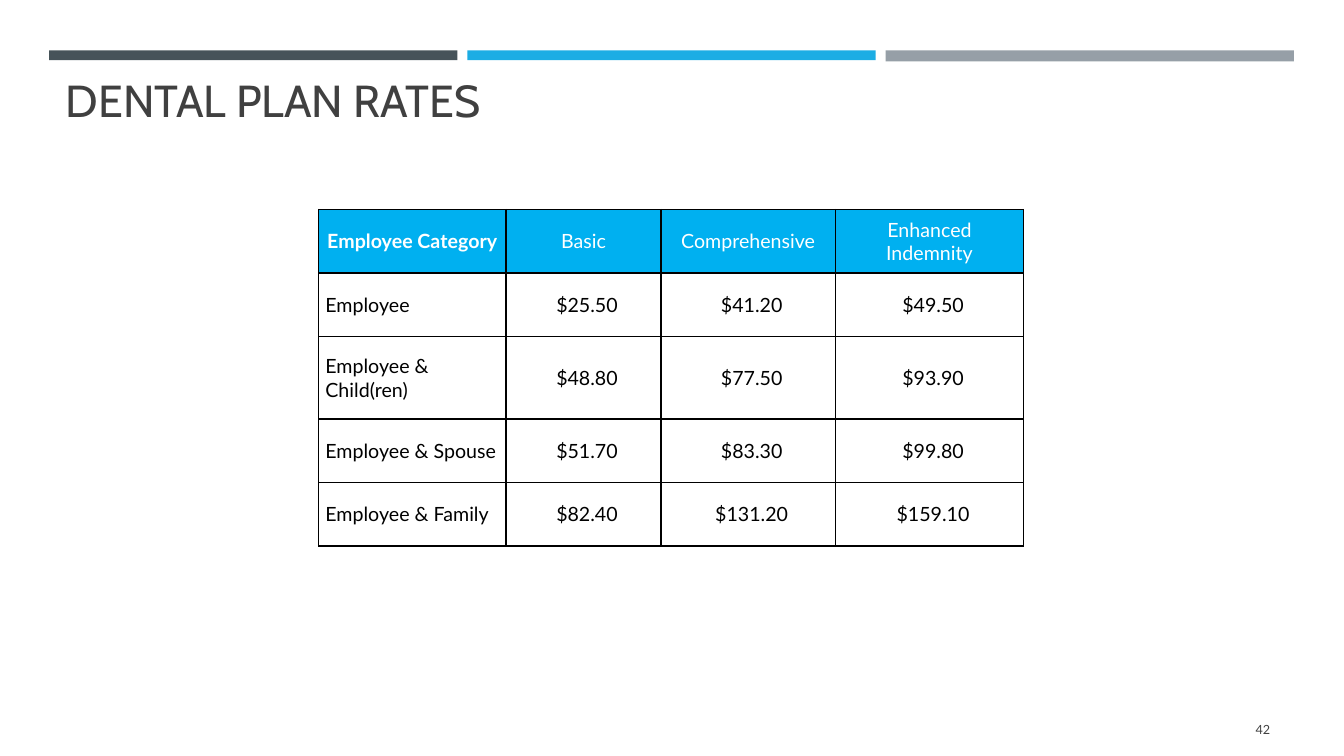
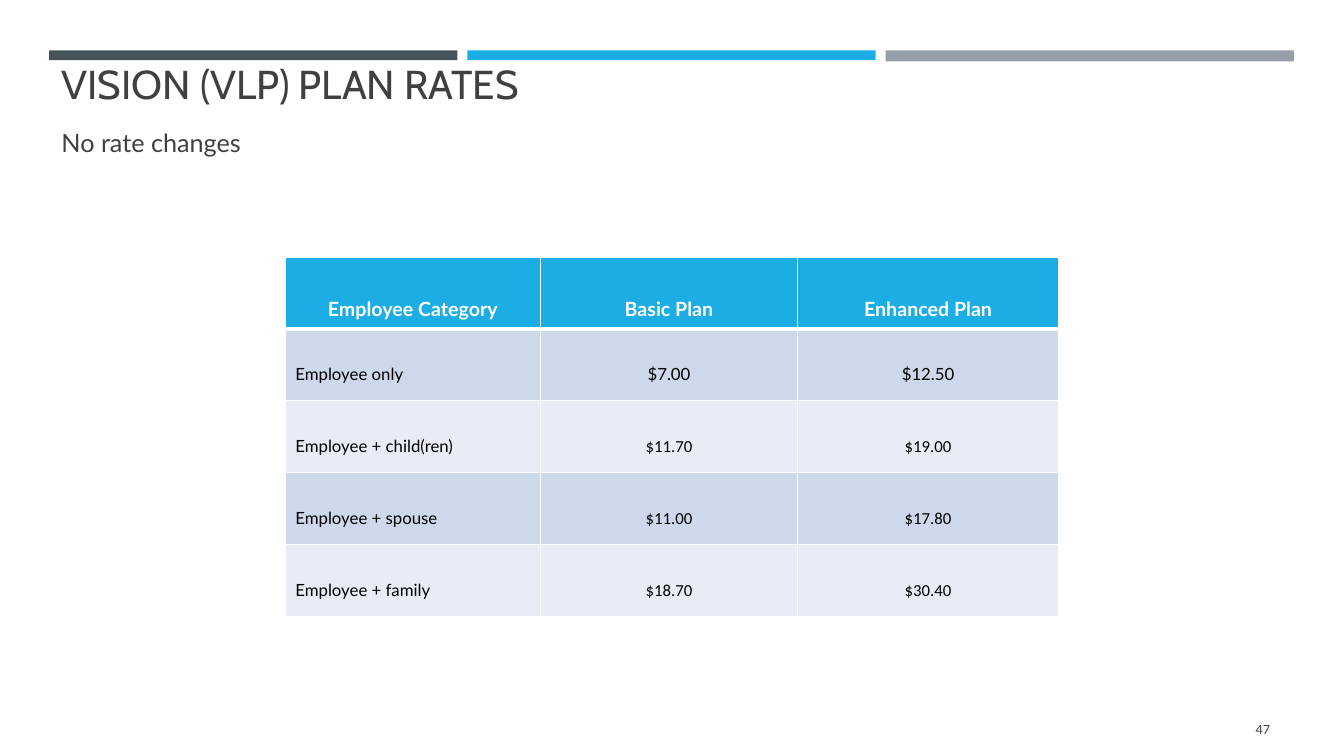
from dataclasses import dataclass

from pptx import Presentation
from pptx.dml.color import RGBColor
from pptx.enum.shapes import MSO_SHAPE
from pptx.enum.text import MSO_ANCHOR, MSO_AUTO_SIZE, PP_ALIGN
from pptx.oxml import parse_xml
from pptx.oxml.ns import nsdecls
from pptx.util import Cm, Pt


@dataclass(frozen=True)
class Theme:
    heading_font: str = "Cabin"
    body_font: str = "Lato"
    price_font: str = "Calibri"
    text: str = "404040"
    black: str = "000000"
    white: str = "FFFFFF"
    bands: tuple = ("465359", "1CADE4", "969FA7")
    dental_header: str = "00B0F0"
    vision_header: str = "1CADE4"
    stripes: tuple = ("CDD9EA", "E8EDF5")
    subtitle_size: float = 18
    table_size: float = 14
    small_table_size: float = 12
    number_size: float = 9


THEME = Theme()

BAND_LEFT, BAND_TOP, BAND_WIDTH, BAND_STEP = 1.24, 1.27, 10.29, 10.54
BAND_HEIGHTS = (0.25, 0.25, 0.28)
NUMBER_BOX = (29.34, 17.86, 2.92, 1.02)

DENTAL = {
    "title": "DENTAL PLAN RATES",
    "title_box": (1.4, 1.88, 20.88, 1.27),
    "title_size": 32,
    "title_anchor": MSO_ANCHOR.MIDDLE,
    "number": "42",
    "table_at": (8.03, 5.28),
    "columns": (4.72, 3.91, 4.39, 4.75),
    "row_heights": (1.6, 1.6, 2.08, 1.6, 1.6),
    "rates": [
        ("Employee Category", "Basic", "Comprehensive", "Enhanced Indemnity"),
        ("Employee", "$25.50", "$41.20", "$49.50"),
        ("Employee & Child(ren)", "$48.80", "$77.50", "$93.90"),
        ("Employee & Spouse", "$51.70", "$83.30", "$99.80"),
        ("Employee & Family", "$82.40", "$131.20", "$159.10"),
    ],
}

VISION = {
    "title": "VISION (VLP) PLAN RATES",
    "title_box": (1.3, 1.47, 21.46, 1.37),
    "title_size": 28.8,
    "title_anchor": MSO_ANCHOR.BOTTOM,
    "subtitle": "No rate changes",
    "subtitle_box": (1.3, 2.87, 26.67, 1.37),
    "number": "47",
    "table_at": (7.19, 6.48),
    "columns": (6.43, 6.48, 6.58),
    "row_heights": (1.81,) * 5,
    "rates": [
        ("Employee Category", "Basic Plan", "Enhanced Plan"),
        ("Employee only", "$7.00", "$12.50"),
        ("Employee + child(ren)", "$11.70", "$19.00"),
        ("Employee + spouse", "$11.00", "$17.80"),
        ("Employee + family", "$18.70", "$30.40"),
    ],
}


def place(box):
    return [Cm(length) for length in box]


def paint(fill, color):
    fill.solid()
    fill.fore_color.rgb = RGBColor.from_string(color)


def write(frame, text, size, color=THEME.text, font=THEME.body_font,
          bold=False, align=PP_ALIGN.LEFT, spacing=None):
    paragraph = frame.paragraphs[0]
    paragraph.alignment = align
    if spacing:
        paragraph.line_spacing = spacing
    run = paragraph.add_run()
    run.text = text
    run.font.size = Pt(size)
    run.font.name = font
    run.font.bold = bold
    run.font.color.rgb = RGBColor.from_string(color)


def add_label(slide, box, text, size, **style):
    frame = slide.shapes.add_textbox(*place(box)).text_frame
    frame.word_wrap = True
    frame.vertical_anchor = MSO_ANCHOR.MIDDLE
    write(frame, text, size, **style)


def add_plan_slide(deck, plan):
    """Add a slide with the shared bands, title and page number."""
    slide = deck.slides.add_slide(deck.slide_layouts[5])
    for index, (color, height) in enumerate(zip(THEME.bands, BAND_HEIGHTS)):
        box = (BAND_LEFT + index * BAND_STEP, BAND_TOP, BAND_WIDTH, height)
        band = slide.shapes.add_shape(MSO_SHAPE.RECTANGLE, *place(box))
        band.shadow.inherit = False
        band.line.fill.background()
        paint(band.fill, color)

    title = slide.shapes.title
    title.left, title.top, title.width, title.height = place(plan["title_box"])
    title.text_frame.auto_size = MSO_AUTO_SIZE.NONE
    title.text_frame.vertical_anchor = plan["title_anchor"]
    write(title.text_frame, plan["title"], plan["title_size"], font=THEME.heading_font)

    if "subtitle" in plan:
        add_label(slide, plan["subtitle_box"], plan["subtitle"],
                  THEME.subtitle_size, spacing=1.1)
    add_label(slide, NUMBER_BOX, plan["number"], THEME.number_size, align=PP_ALIGN.RIGHT)
    return slide


def set_borders(cell, color, top=1, bottom=1):
    """Draw the four cell edges; call before filling the cell."""
    for side, points in (("L", 1), ("R", 1), ("T", top), ("B", bottom)):
        cell._tc.get_or_add_tcPr().append(parse_xml(
            f'<a:ln{side} {nsdecls("a")} w="{Pt(points)}">'
            f'<a:solidFill><a:srgbClr val="{color}"/></a:solidFill></a:ln{side}>'))


def add_rates(slide, plan, style_cell):
    """Lay out the rate table, leaving each cell's look to style_cell."""
    columns, heights, rates = plan["columns"], plan["row_heights"], plan["rates"]
    box = (*plan["table_at"], sum(columns), sum(heights))
    table = slide.shapes.add_table(len(rates), len(columns), *place(box)).table
    table.first_row = table.horz_banding = False
    for column, width in zip(table.columns, columns):
        column.width = Cm(width)
    for row, height in zip(table.rows, heights):
        row.height = Cm(height)
    for r, rate_row in enumerate(rates):
        for c, text in enumerate(rate_row):
            align = PP_ALIGN.LEFT if r and not c else PP_ALIGN.CENTER
            style_cell(table.cell(r, c), text, r, c, align)


def style_dental(cell, text, row, column, align):
    header = row == 0
    set_borders(cell, THEME.black)
    paint(cell.fill, THEME.dental_header if header else THEME.white)
    cell.vertical_anchor = MSO_ANCHOR.MIDDLE
    cell.margin_top = cell.margin_bottom = 0
    cell.margin_right = Cm(0.17)
    cell.margin_left = Cm(0.35 if row and column else 0.17)
    write(cell.text_frame, text, THEME.table_size,
          color=THEME.white if header else THEME.black,
          bold=header and column == 0, align=align)


def style_vision(cell, text, row, column, align):
    header = row == 0
    set_borders(cell, THEME.white, top=3 if row == 1 else 1, bottom=3 if header else 1)
    paint(cell.fill, THEME.vision_header if header else THEME.stripes[(row - 1) % 2])
    write(cell.text_frame, text,
          THEME.table_size if header else THEME.small_table_size,
          color=THEME.white if header else THEME.black,
          font=THEME.price_font if row > 1 and column else THEME.body_font,
          bold=header, align=align, spacing=2.5)


def main():
    deck = Presentation()
    deck.slide_width, deck.slide_height = Cm(33.87), Cm(19.05)
    for plan, style_cell in ((DENTAL, style_dental), (VISION, style_vision)):
        add_rates(add_plan_slide(deck, plan), plan, style_cell)
    deck.save("out.pptx")


if __name__ == "__main__":
    main()
